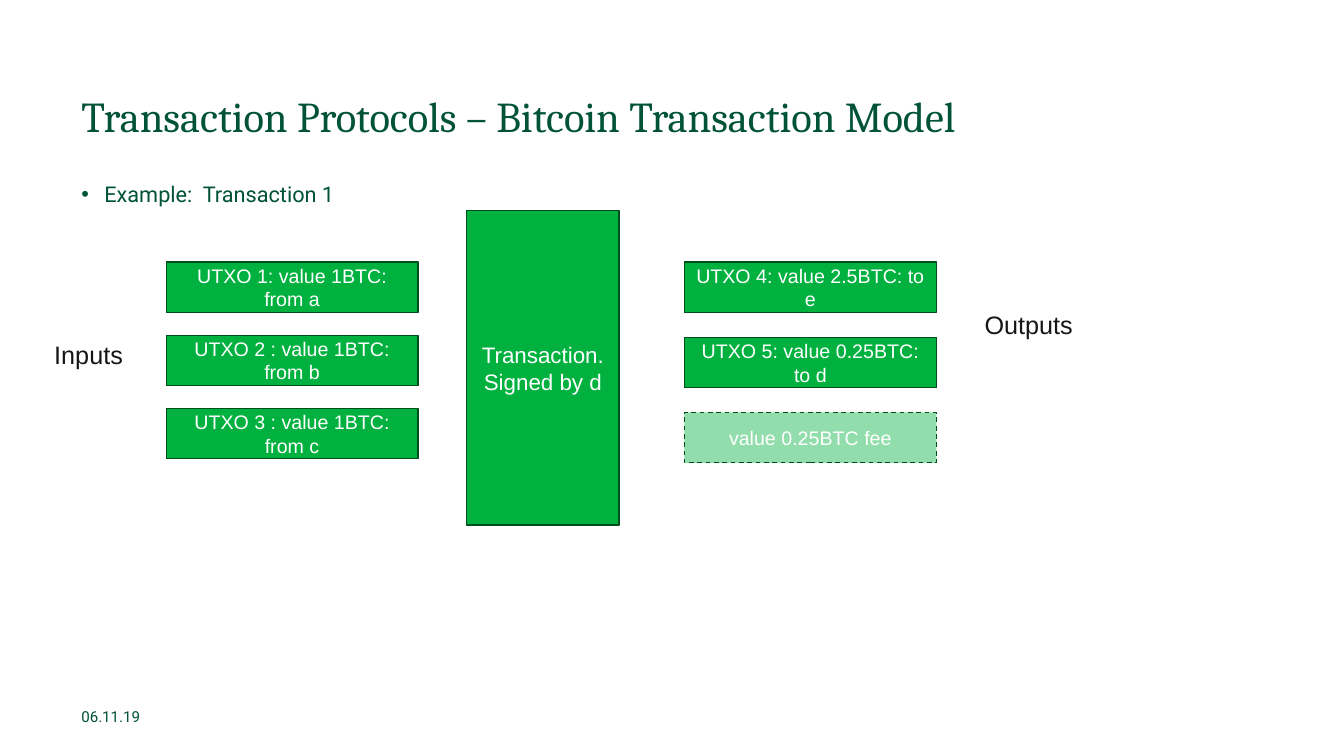
import dataclasses

import pptx
import pptx.dml.color
import pptx.enum.dml
import pptx.enum.shapes
import pptx.enum.text
import pptx.oxml
import pptx.oxml.ns
import pptx.util

Pt = pptx.util.Pt
ALIGN = pptx.enum.text.PP_ALIGN
ANCHOR = pptx.enum.text.MSO_ANCHOR


@dataclasses.dataclass(frozen=True)
class Theme:
    heading: str = "005336"
    fill: str = "00B140"
    outline: str = "004E1C"
    on_fill: str = "FFFFFF"
    label: str = "171616"
    title_font: str = "Cambria"
    body_font: str = "Roboto"
    diagram_font: str = "Arial"
    title_size: float = 30.4
    body_size: float = 15.5
    date_size: float = 10.8
    utxo_size: float = 14
    transaction_size: float = 16
    label_size: float = 18
    line_width: float = 0.85


THEME = Theme()


def rgb(color):
    return pptx.dml.color.RGBColor.from_string(color)


def write(tf, lines, font, size, color, align=ALIGN.LEFT, anchor=ANCHOR.TOP, wrap=True):
    tf.word_wrap = wrap
    tf.vertical_anchor = anchor
    for i, line in enumerate(lines):
        p = tf.paragraphs[0] if i == 0 else tf.add_paragraph()
        p.alignment = align
        r = p.add_run()
        r.text = line
        r.font.name = font
        r.font.size = Pt(size)
        r.font.color.rgb = rgb(color)


def add_text(s, box, text, font, size, color, **layout):
    sp = s.shapes.add_textbox(*map(Pt, box))
    write(sp.text_frame, [text], font, size, color, **layout)
    return sp


def add_block(s, box, lines, size):
    sp = s.shapes.add_shape(pptx.enum.shapes.MSO_SHAPE.RECTANGLE, *map(Pt, box))
    sp.shadow.inherit = False
    sp.fill.solid()
    sp.fill.fore_color.rgb = rgb(THEME.fill)
    sp.line.color.rgb = rgb(THEME.outline)
    sp.line.width = Pt(THEME.line_width)
    write(sp.text_frame, lines, THEME.diagram_font, size, THEME.on_fill,
          align=ALIGN.CENTER, anchor=ANCHOR.MIDDLE)
    return sp


def add_title(s, box, text):
    sp = s.shapes.title
    sp.left, sp.top, sp.width, sp.height = map(Pt, box)
    write(sp.text_frame, [text], THEME.title_font, THEME.title_size, THEME.heading)
    sp.text_frame.paragraphs[0].line_spacing = 0.9


def add_bullet(s, box, text):
    sp = add_text(s, box, text, THEME.body_font, THEME.body_size, THEME.heading)
    p = sp.text_frame.paragraphs[0]
    p.line_spacing = 0.9
    pPr = p._p.get_or_add_pPr()
    pPr.set("marL", str(Pt(16.5)))
    pPr.set("indent", str(-Pt(16.5)))
    color = pptx.oxml.ns.qn("a:buClr")
    bu_color = pPr.makeelement(color, {})
    bu_color.append(pPr.makeelement(pptx.oxml.ns.qn("a:srgbClr"), {"val": THEME.heading}))
    pPr.append(bu_color)
    pPr.append(pPr.makeelement(pptx.oxml.ns.qn("a:buFont"), {"typeface": "Arial"}))
    pPr.append(pPr.makeelement(pptx.oxml.ns.qn("a:buChar"), {"char": "•"}))


def add_utxo_column(s, box, texts):
    """Spread blocks evenly from the top to the bottom of the box."""
    left, top, width, height = box
    block_height = 36
    pitch = (height - block_height) / (len(texts) - 1)
    return [add_block(s, (left, top + i * pitch, width, block_height), [text], THEME.utxo_size)
            for i, text in enumerate(texts)]


def mark_as_fee(sp):
    sp.line.dash_style = pptx.enum.dml.MSO_LINE.DASH
    color = sp.fill._xPr.find(".//" + pptx.oxml.ns.qn("a:srgbClr"))
    color.append(color.makeelement(pptx.oxml.ns.qn("a:alpha"), {"val": "43000"}))


def add_diagram(s, box):
    left, top, width, height = box
    column_top = top + 36.7

    # Inputs, transaction and outputs
    add_utxo_column(s, (left + 87, column_top, 180, 140.4), [
        "UTXO 1: value 1BTC: from a",
        "UTXO 2 : value 1BTC: from b",
        "UTXO 3 : value 1BTC: from c",
    ])
    add_block(s, (left + 301.7, top, 108.7, height),
              ["Transaction.", "Signed by d"], THEME.transaction_size)
    outputs = add_utxo_column(s, (left + 457.2, column_top, 180, 143.4), [
        "UTXO 4: value 2.5BTC: to e",
        "UTXO 5: value 0.25BTC: to d",
        "value 0.25BTC fee",
    ])
    mark_as_fee(outputs[-1])

    # Side labels
    for text, x, y, w in [("Inputs", left, top + 88.5, 64),
                          ("Outputs", left + width - 78.5, top + 66.9, 78.5)]:
        add_text(s, (x, y, w, 29), text, THEME.diagram_font, THEME.label_size,
                 THEME.label, wrap=False)


def main():
    prs = pptx.Presentation()
    prs.slide_width, prs.slide_height = Pt(960), Pt(540)
    s = prs.slides.add_slide(prs.slide_layouts[5])

    add_title(s, (51, 65, 828, 55.5), "Transaction Protocols – Bitcoin Transaction Model")
    add_bullet(s, (51, 128, 828, 36), "Example:  Transaction 1")
    add_diagram(s, (31.7, 150.5, 743, 224.6))
    add_text(s, (51, 497.5, 216, 29), "06.11.19", THEME.body_font, THEME.date_size,
             THEME.heading, anchor=ANCHOR.MIDDLE)

    prs.save("out.pptx")


if __name__ == "__main__":
    main()
